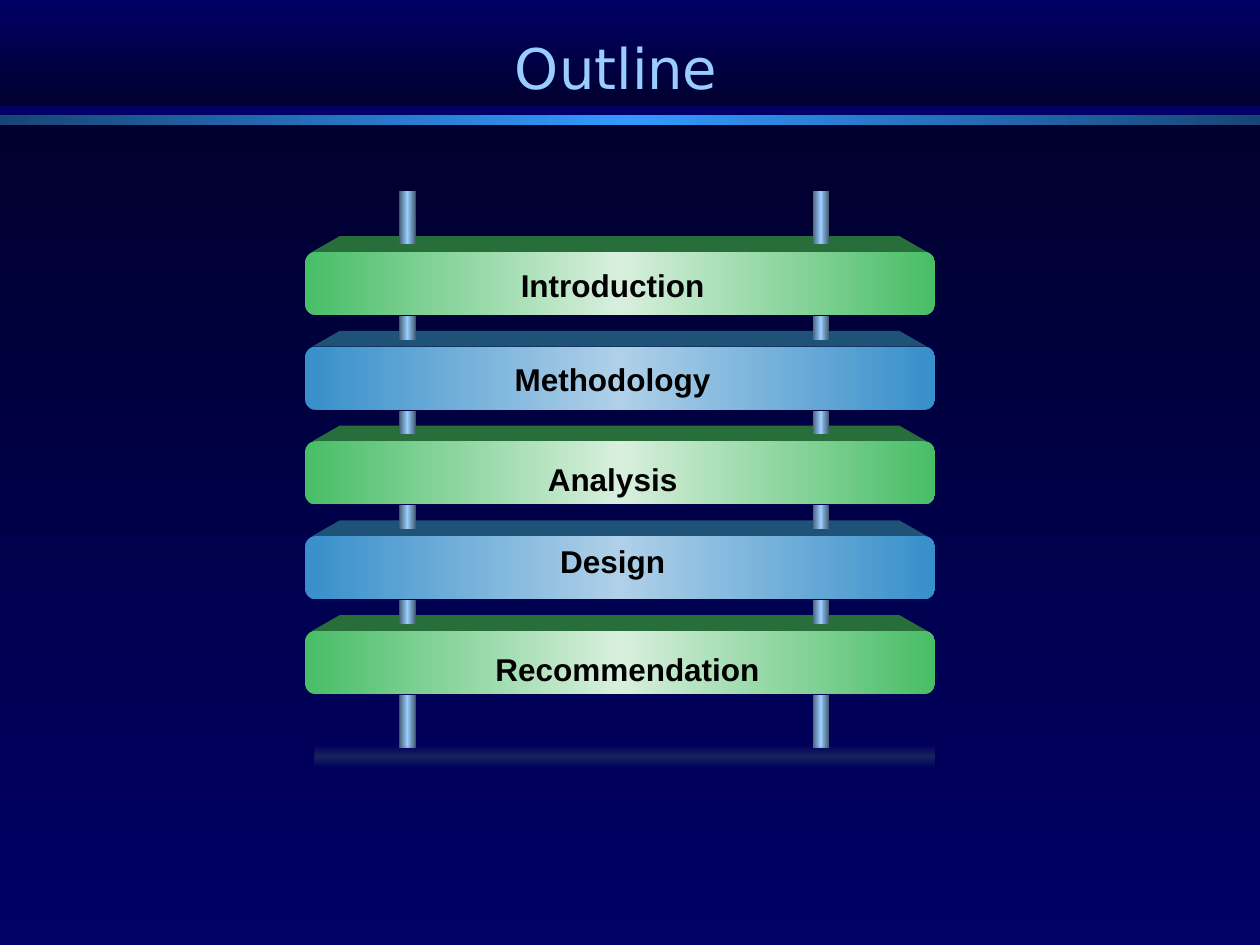
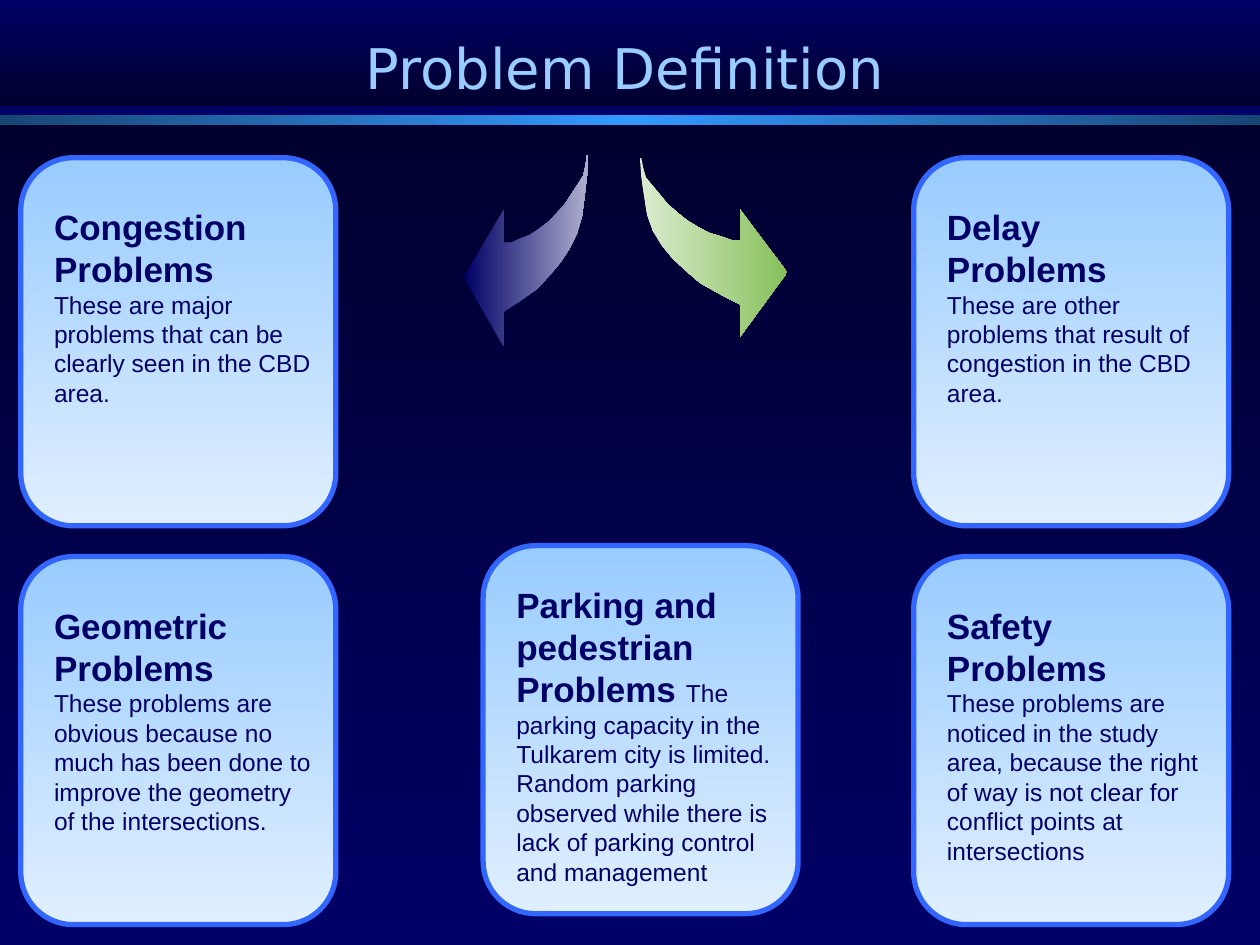
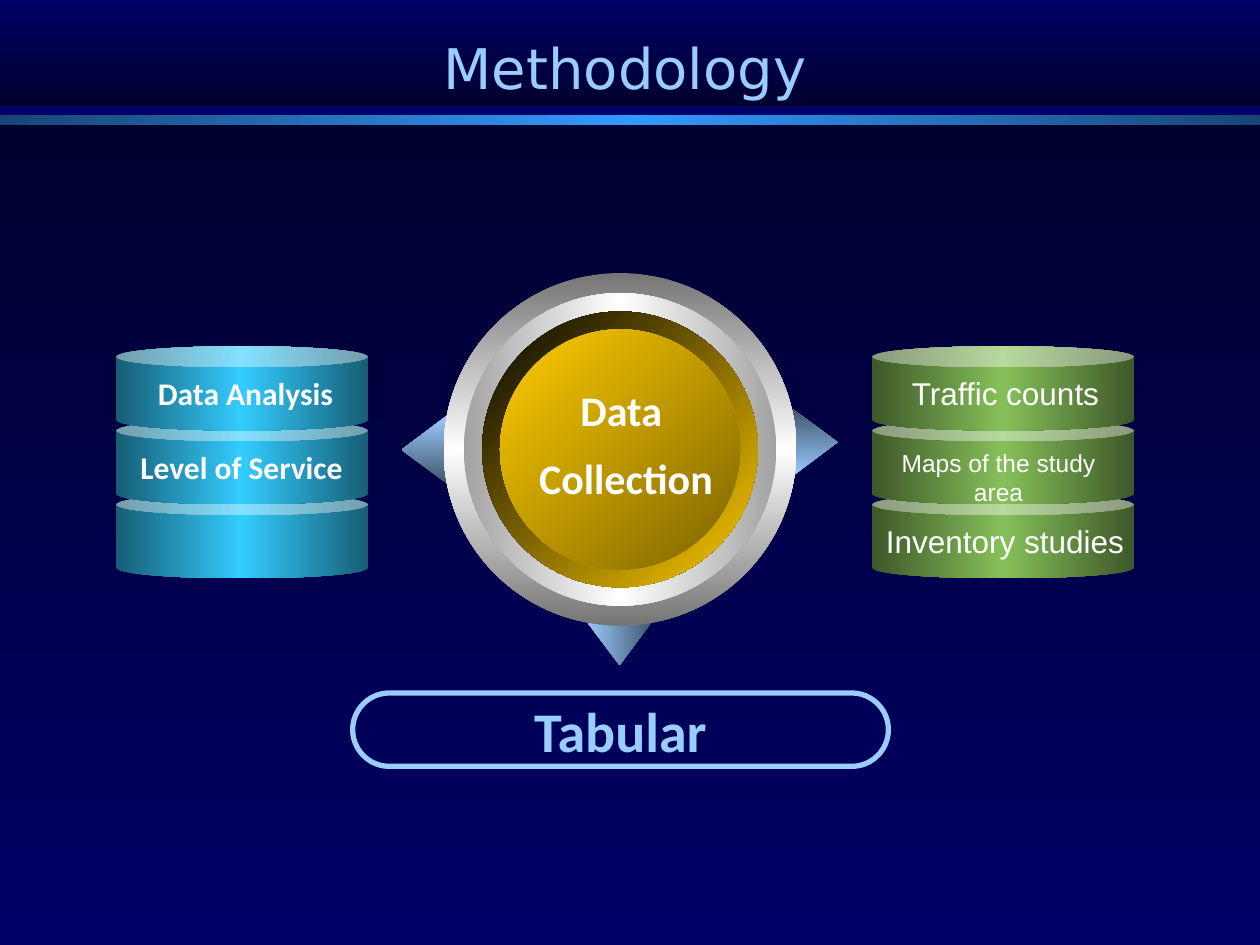
"""Build three slides on a traffic study: outline, problems and methodology."""
from dataclasses import dataclass

from lxml import etree
from pptx import Presentation
from pptx import util as u
from pptx.dml.color import RGBColor
from pptx.enum import shapes, text
from pptx.oxml.ns import qn

KIND = shapes.MSO_SHAPE


@dataclass(frozen=True)
class Theme:
    navy: str = "000066"
    night: str = "00002F"
    sky: str = "99CCFF"
    border: str = "3366FF"
    white: str = "FFFFFF"
    black: str = "000000"
    green_top: str = "286E3B"
    blue_top: str = "1E5276"
    band: tuple = ("174675", "3399FF", "174675")
    green_bar: tuple = ("48BE67", "D8EFDD", "48BE67")
    blue_bar: tuple = ("378FCB", "AFD0E8", "378FCB")
    rod: tuple = ("465E75", "99CCFF", "465E75")
    card: tuple = ("99CCFF", "E0EFFF")
    blue_arrow: tuple = ("000066", "B0B0D0")
    green_arrow: tuple = ("DCECD0", "86C05A")
    blue_can: tuple = ("175E75", "33CCFF", "175E75")
    green_can: tuple = ("3E5829", "86C05A", "3E5829")
    pointer: tuple = ("40556B", "99CCFF")
    floor: str = "2B3D62"
    title_font: str = "DejaVu Sans"
    body_font: str = "Arial"
    label_font: str = "Calibri"
    title_size: int = 32
    hub_size: int = 24
    heading_size: int = 20
    label_size: int = 18
    body_size: int = 14


THEME = Theme()
TITLES = ("Outline ", "Problem Definition", "Methodology")

SECTIONS = (
    ("Introduction", 8.69, 0.15),
    ("Methodology", 8.69, 0.15),
    ("Analysis", 8.69, 0.25),
    ("Design", 8.69, 0),
    ("Recommendation", 8.99, 0.25),
)

CARDS = (
    (18.42, 3.18, 0.84, "Delay Problems",
     "These are other problems that result of congestion in the CBD area."),
    (0.42, 3.18, 0.84, "Congestion Problems",
     "These are major problems that can be clearly seen in the CBD area."),
    (18.42, 11.22, 0.84, "Safety Problems",
     "These problems are noticed in the study area, because the right of way "
     "is not clear for conflict points at intersections"),
    (0.42, 11.22, 0.84, "Geometric Problems",
     "These problems are obvious because no much has been done to improve the "
     "geometry of the intersections."),
)
PARKING = (9.74, 11.0, 0.64, "Parking and pedestrian Problems ",
           "The parking capacity in the Tulkarem city is limited. Random parking "
           "observed while there is lack of parking control and management")

ARROW_OUTLINE = (
    (0, 0), (1, 11), (3, 22), (5, 32), (9, 41), (15, 49), (22, 56), (31, 63),
    (41, 70), (54, 76), (68, 82), (68, 100), (100, 64), (68, 29), (68, 46),
    (62, 46), (55, 44), (47, 42), (40, 39), (32, 35), (26, 31), (19, 26),
    (13, 20), (8, 15), (4, 11), (2, 5), (1, 0),
)
ARROWS = (
    (9.35, 3.12, 2.51, 3.86, True, THEME.blue_arrow),
    (12.9, 3.18, 2.97, 3.61, False, THEME.green_arrow),
)

LEFT_LABELS = (
    ("Data Analysis", 4.95, THEME.label_size),
    ("Level of Service", 4.87, THEME.label_size),
)
RIGHT_LABELS = (
    ("Traffic counts", 20.27, THEME.label_size),
    ("Maps of the study area", 20.13, THEME.body_size),
    ("Inventory studies", 20.26, THEME.label_size),
)
CAN_STACKS = (
    (2.34, 5.08, THEME.blue_can, LEFT_LABELS, THEME.label_font, True),
    (17.58, 5.28, THEME.green_can, RIGHT_LABELS, THEME.body_font, False),
)
POINTERS = ((7.87, 8.61, 270), (15.75, 8.46, 90), (11.81, 12.5, 180))
RINGS = (
    (7.11, ("757575", "FFFFFF", "757575"), 90),
    (6.3, ("A3A3A3", "FFFFFF", "A3A3A3"), 0),
    (5.56, ("000000", "FFCC00"), 45),
    (4.84, ("FFCC00", "7D6400"), 45),
)


def box(left, top, width, height):
    """Turn centimetres into lengths."""
    return [u.Cm(value) for value in (left, top, width, height)]


def paint(shape, colors, angle=0, alphas=None):
    """Fill with one colour, or with a gradient of evenly spaced colours."""
    shape.shadow.inherit = False
    shape.line.fill.background()
    if isinstance(colors, str):
        shape.fill.solid()
        shape.fill.fore_color.rgb = RGBColor.from_string(colors)
        return
    shape.fill.gradient()
    gradient = shape._element.spPr.find(qn("a:gradFill"))
    gradient.clear()
    gradient.set("rotWithShape", "1")
    stops = etree.SubElement(gradient, qn("a:gsLst"))
    for index, value in enumerate(colors):
        position = str(100000 * index // (len(colors) - 1))
        stop = etree.SubElement(stops, qn("a:gs"), pos=position)
        color = etree.SubElement(stop, qn("a:srgbClr"), val=value)
        if alphas:
            etree.SubElement(color, qn("a:alpha"), val=str(alphas[index] * 1000))
    etree.SubElement(gradient, qn("a:lin"), ang=str(angle * 60000), scaled="0")


def add_filled(slide, kind, place, colors, angle=0, alphas=None):
    """Add a preset shape without outline."""
    shape = slide.shapes.add_shape(kind, *box(*place))
    paint(shape, colors, angle, alphas)
    return shape


def outline(shape, color):
    """Give a shape its three-point border."""
    shape.line.color.rgb = RGBColor.from_string(color)
    shape.line.width = u.Pt(3)


def add_run(paragraph, wording, font, size, color, bold=False):
    """Add one formatted run."""
    run = paragraph.add_run()
    run.text = wording
    run.font.name = font
    run.font.size = u.Pt(size)
    run.font.bold = bold
    run.font.color.rgb = RGBColor.from_string(color)


def add_label(slide, place, lines, font, size, color, bold=False, wrap=True):
    """Add a text box of centred lines."""
    frame = slide.shapes.add_textbox(*box(*place)).text_frame
    frame.word_wrap = wrap
    for index, line in enumerate(lines):
        paragraph = frame.add_paragraph() if index else frame.paragraphs[0]
        paragraph.alignment = text.PP_ALIGN.CENTER
        paragraph.space_after = u.Pt(10)
        add_run(paragraph, line, font, size, color, bold)


def decorate_layout(presentation, layout):
    """Put background, bands and title place on the shared layout."""
    background = presentation.slide_master.background.fill
    background.solid()
    background.fore_color.rgb = RGBColor.from_string(THEME.navy)
    title = layout.placeholders[0]
    title.left, title.top, title.width, title.height = box(0.64, 0.43, 23.93, 1.85)
    slide = presentation.slides[0]
    bands = (
        ((0, 0, 25.4, 2.13), (THEME.navy, THEME.night), 90),
        ((0, 2.52, 25.4, 16.53), (THEME.night, THEME.navy), 90),
        ((0, 2.32, 25.4, 0.21), THEME.band, 0),
    )
    for index, (place, colors, angle) in enumerate(bands):
        band = add_filled(slide, KIND.RECTANGLE, place, colors, angle)
        layout.shapes._spTree.insert(2 + index, band._element)


def add_title(slide, wording):
    """Write the slide title."""
    title = slide.shapes.title
    title.left, title.top, title.width, title.height = box(0.64, 0.43, 23.93, 1.85)
    title.text_frame.vertical_anchor = text.MSO_ANCHOR.MIDDLE
    paragraph = title.text_frame.paragraphs[0]
    paragraph.alignment = text.PP_ALIGN.CENTER
    add_run(paragraph, wording, THEME.title_font, THEME.title_size, THEME.sky)


def build_outline(slide):
    """Draw the ladder of sections."""
    bar_tops = [5.08 + 1.91 * index for index in range(len(SECTIONS))]
    for index, ((name, left, offset), top) in enumerate(zip(SECTIONS, bar_tops)):
        edge = THEME.blue_top if index % 2 else THEME.green_top
        face = THEME.blue_bar if index % 2 else THEME.green_bar
        lid = add_filled(slide, KIND.TRAPEZOID, (6.29, top - 0.32, 12.4, 0.32), edge)
        lid.adjustments[0] = 1.75
        add_filled(slide, KIND.ROUNDED_RECTANGLE, (6.15, top, 12.7, 1.27), face)
        add_label(slide, (left, top + offset, 7.32, 1.02), [name], THEME.body_font,
                  THEME.label_size, THEME.black, True)
    rod_tops = [3.86] + [top + 1.29 for top in bar_tops]
    for left in (8.05, 16.38):
        for top in rod_tops:
            height = 1.07 if top in (rod_tops[0], rod_tops[-1]) else 0.48
            add_filled(slide, KIND.RECTANGLE, (left, top, 0.33, height), THEME.rod)
    add_filled(slide, KIND.RECTANGLE, (6.35, 15.04, 12.5, 0.43),
               (THEME.floor,) * 3, 90, (0, 58, 0))


def add_card(slide, left, top, offset, heading, body, joined=False):
    """Draw a card with heading and body, in one paragraph when joined."""
    card = add_filled(slide, KIND.ROUNDED_RECTANGLE, (left, top, 6.35, 7.42),
                      THEME.card, 90)
    outline(card, THEME.border)
    place = box(left + 0.42, top + offset, 5.72, 5.5)
    frame = slide.shapes.add_textbox(*place).text_frame
    frame.word_wrap = True
    paragraph = frame.paragraphs[0]
    add_run(paragraph, heading, THEME.body_font, THEME.heading_size, THEME.navy, True)
    if not joined:
        paragraph = frame.add_paragraph()
    add_run(paragraph, body, THEME.body_font, THEME.body_size, THEME.navy)


def add_curved_arrow(slide, left, top, width, height, mirrored, colors):
    """Scale the arrow outline into its place."""
    points = [(u.Cm(left + width * ((100 - x) if mirrored else x) / 100),
               u.Cm(top + height * y / 100)) for x, y in ARROW_OUTLINE]
    builder = slide.shapes.build_freeform(*points[0])
    builder.add_line_segments(points[1:], close=True)
    paint(builder.convert_to_shape(), colors)


def build_problems(slide):
    """Draw the problem cards and the two arrows."""
    for card in CARDS:
        add_card(slide, *card)
    add_card(slide, *PARKING, joined=True)
    for arrow in ARROWS:
        add_curved_arrow(slide, *arrow)


def build_methodology(slide):
    """Draw the hub with its pointers, the can stacks and the pill."""
    can_tops = [6.98 + 1.49 * index for index in range(3)]
    for left, width, colors, labels, font, bold in CAN_STACKS:
        for top in reversed(can_tops):
            add_filled(slide, KIND.CAN, (left, top, width, 1.7), colors)
        for (name, centre, size), top in zip(labels, can_tops):
            add_label(slide, (centre - 2.75, top + 0.43, 5.5, 1.02), [name], font,
                      size, THEME.white, bold, False)
    for left, top, rotation in POINTERS:
        pointer = add_filled(slide, KIND.UP_ARROW, (left, top, 1.36, 0.91),
                             THEME.pointer)
        pointer.adjustments[0], pointer.adjustments[1] = 0.52, 1
        pointer.rotation = rotation
    for size, colors, angle in RINGS:
        place = (12.5 - size / 2, 9.06 - size / 2, size, size)
        add_filled(slide, KIND.OVAL, place, colors, angle)
    add_label(slide, (10.59, 7.62, 4.06, 2.67), ["Data ", "Collection"],
              THEME.label_font, THEME.hub_size, THEME.white, True, False)
    pill = add_filled(slide, KIND.ROUNDED_RECTANGLE, (7.11, 13.97, 10.8, 1.48),
                      THEME.navy)
    pill.fill.background()
    pill.adjustments[0] = 0.5
    outline(pill, THEME.sky)
    frame = pill.text_frame
    frame.word_wrap = False
    frame.vertical_anchor = text.MSO_ANCHOR.MIDDLE
    frame.paragraphs[0].alignment = text.PP_ALIGN.CENTER
    add_run(frame.paragraphs[0], "Tabular", THEME.label_font, THEME.title_size,
            THEME.sky, True)


def main():
    """Build and save the presentation."""
    presentation = Presentation()
    presentation.slide_width, presentation.slide_height = u.Cm(25.4), u.Cm(19.05)
    layout = presentation.slide_layouts[5]
    builders = (build_outline, build_problems, build_methodology)
    for wording, build in zip(TITLES, builders):
        slide = presentation.slides.add_slide(layout)
        add_title(slide, wording)
        build(slide)
    decorate_layout(presentation, layout)
    presentation.save("out.pptx")


if __name__ == "__main__":
    main()
